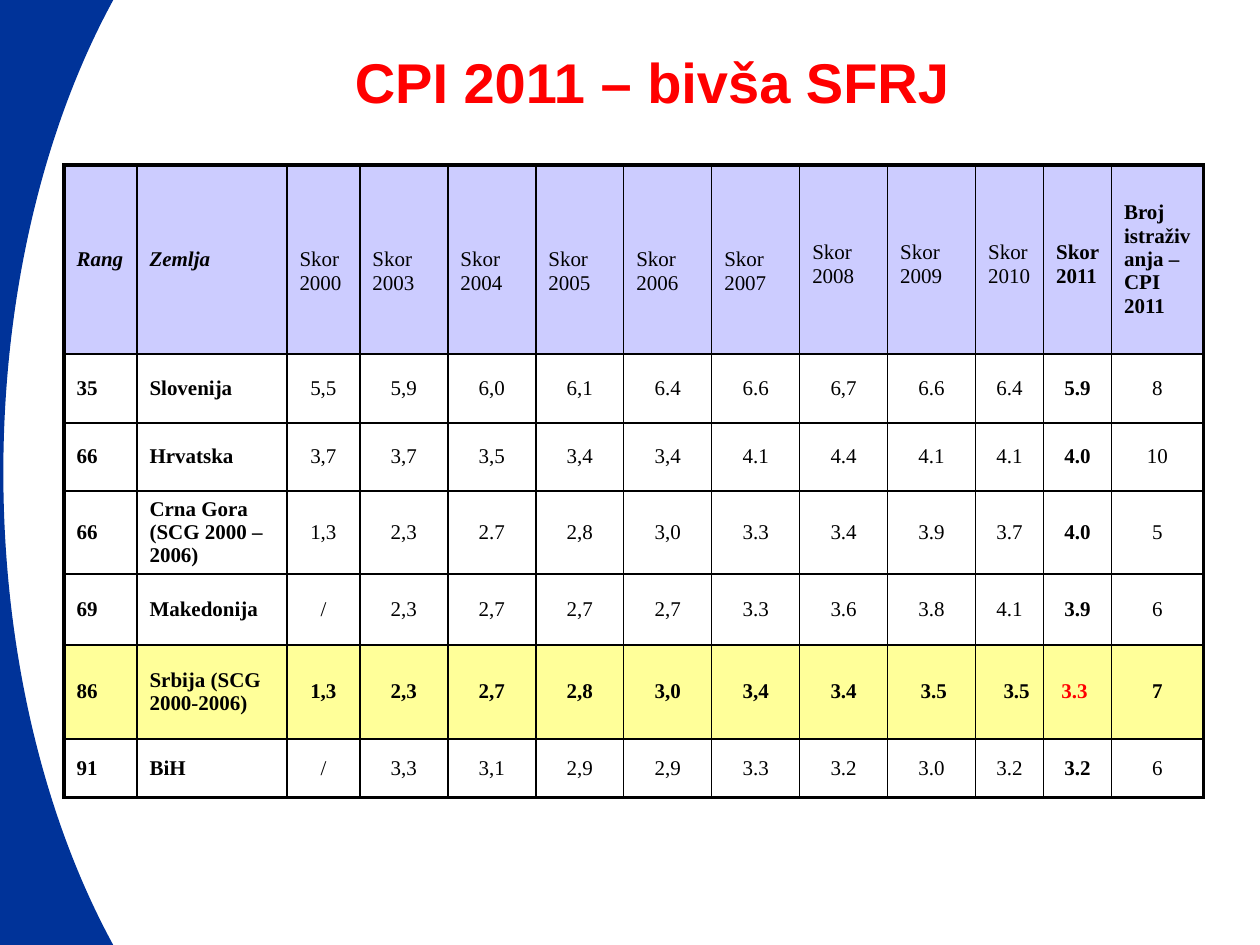
import pptx
import pptx.dml.color
import pptx.enum.shapes
import pptx.enum.text
import pptx.oxml
import pptx.oxml.ns
import pptx.util

RGBColor = pptx.dml.color.RGBColor
Align = pptx.enum.text.PP_ALIGN
Anchor = pptx.enum.text.MSO_ANCHOR

BLACK = RGBColor(0x00, 0x00, 0x00)
WHITE = RGBColor(0xFF, 0xFF, 0xFF)
RED = RGBColor(0xFF, 0x00, 0x00)
BLUE = RGBColor(0x00, 0x33, 0x99)
LILAC = RGBColor(0xCC, 0xCC, 0xFF)
YELLOW = RGBColor(0xFF, 0xFF, 0x99)

TITLE = "CPI 2011 – bivša SFRJ"
HEADER = ["Rang", "Zemlja", "Skor 2000", "Skor 2003", "Skor 2004", "Skor 2005",
          "Skor 2006", "Skor 2007", "Skor\n2008", "Skor\n2009", "Skor\n2010",
          "Skor\n2011", "Broj istraživanja – CPI 2011"]
COUNTRIES = [
    ["35", "Slovenija", "5,5", "5,9", "6,0", "6,1", "6.4", "6.6", "6,7", "6.6", "6.4", "5.9", "8"],
    ["66", "Hrvatska", "3,7", "3,7", "3,5", "3,4", "3,4", "4.1", "4.4", "4.1", "4.1", "4.0", "10"],
    ["66", "Crna Gora (SCG 2000 – 2006)", "1,3", "2,3", "2.7", "2,8", "3,0", "3.3", "3.4", "3.9",
     "3.7", "4.0", "5"],
    ["69", "Makedonija", "/", "2,3", "2,7", "2,7", "2,7", "3.3", "3.6", "3.8", "4.1", "3.9", "6"],
    ["86", "Srbija (SCG 2000-2006)", "1,3", "2,3", "2,7", "2,8", "3,0", "3,4", "3.4", "3.5",
     "3.5", "3.3", "7"],
    ["91", "BiH", "/", "3,3", "3,1", "2,9", "2,9", "3.3", "3.2", "3.0", "3.2", "3.2", "6"],
]
ROWS = [HEADER] + COUNTRIES
COLUMN_WIDTHS = [73, 150, 73] + [88] * 7 + [68, 68, 92]
ROW_HEIGHTS = [189, 69, 68, 83, 71, 94, 59]
SERBIA_ROW, SCORE_2011, SURVEYS = 5, 11, 12
SERBIA_INDENTS = {9: 33, 10: 28, 11: 18}  # left-aligned scores: column to px


def px(length):
    return round(length * 914400 / 126)


def set_values(target, values):
    for name, value in values.items():
        setattr(target, name, value)


def set_font(font, color, **values):
    set_values(font, values)
    font.color.rgb = color


def set_borders(cell, row, column):
    """Thin lines inside the table, thick ones around it."""
    outer = {"L": column == 0, "R": column == len(HEADER) - 1,
             "T": row == 0, "B": row == len(ROWS) - 1}
    properties = cell._tc.get_or_add_tcPr()
    for index, (side, thick) in enumerate(outer.items()):
        width = pptx.util.Pt(2 if thick else 1)
        properties.insert(index, pptx.oxml.parse_xml(
            f'<a:ln{side} {pptx.oxml.ns.nsdecls("a")} w="{width}">'
            f'<a:solidFill><a:srgbClr val="{BLACK}"/></a:solidFill></a:ln{side}>'))


def cell_layout(row, column):
    """Anchor and margins that place the text of one cell."""
    layout = {"vertical_anchor": Anchor.MIDDLE}
    if row == 0 and 2 <= column <= 7:
        layout["margin_top"] = px(30)
    elif row == 0 and 8 <= column <= SCORE_2011:
        layout.update(vertical_anchor=Anchor.TOP, margin_top=px(76), margin_right=px(6))
    elif row == SERBIA_ROW and column in SERBIA_INDENTS:
        layout.update(margin_left=px(SERBIA_INDENTS[column]), margin_right=px(6))
    return layout


def fill_cell(cell, row, column):
    is_header, is_serbia = row == 0, row == SERBIA_ROW
    centred = not is_header and column >= 2 and not (is_serbia and column in SERBIA_INDENTS)
    bold = (column in (0, 1, SCORE_2011) or is_serbia
            or (is_header and column == SURVEYS))
    color = RED if is_serbia and column == SCORE_2011 else BLACK

    cell.text = ROWS[row][column]
    set_values(cell, cell_layout(row, column))
    for paragraph in cell.text_frame.paragraphs:
        paragraph.alignment = Align.CENTER if centred else Align.LEFT
        for run in paragraph.runs:
            set_font(run.font, color, name="Times New Roman", size=pptx.util.Pt(12),
                     bold=bold, italic=is_header and column < 2)
    cell.fill.solid()
    cell.fill.fore_color.rgb = LILAC if is_header else YELLOW if is_serbia else WHITE
    set_borders(cell, row, column)


def add_moon(slide):
    moon = slide.shapes.add_shape(pptx.enum.shapes.MSO_SHAPE.MOON,
                                  px(-168), px(-84), px(336), px(1113))
    moon.adjustments[0] = 0.51
    moon.shadow.inherit = False
    moon.fill.solid()
    moon.fill.fore_color.rgb = BLUE
    moon.line.fill.background()


def format_title(title):
    set_values(title, {"left": px(84), "top": px(35), "width": px(1137), "height": px(100)})
    title.text_frame.text = TITLE
    set_values(title.text_frame, {"vertical_anchor": Anchor.TOP, "word_wrap": True,
                                  "auto_size": pptx.enum.text.MSO_AUTO_SIZE.NONE})
    paragraph = title.text_frame.paragraphs[0]
    set_values(paragraph, {"alignment": Align.CENTER, "line_spacing": pptx.util.Pt(42)})
    set_font(paragraph.runs[0].font, RED, name="Arial", size=pptx.util.Pt(32), bold=True)


def add_score_table(slide):
    table = slide.shapes.add_table(len(ROWS), len(HEADER), px(64), px(165),
                                   px(sum(COLUMN_WIDTHS)), px(sum(ROW_HEIGHTS))).table
    for column, width in zip(table.columns, COLUMN_WIDTHS):
        column.width = px(width)
    for row, height in zip(table.rows, ROW_HEIGHTS):
        row.height = px(height)
    for row in range(len(ROWS)):
        for column in range(len(HEADER)):
            fill_cell(table.cell(row, column), row, column)


def main():
    presentation = pptx.Presentation()
    set_values(presentation, {"slide_width": px(1260), "slide_height": px(945)})
    slide = presentation.slides.add_slide(presentation.slide_layouts[5])
    add_moon(slide)
    format_title(slide.shapes.title)
    add_score_table(slide)
    presentation.save("out.pptx")


if __name__ == "__main__":
    main()
